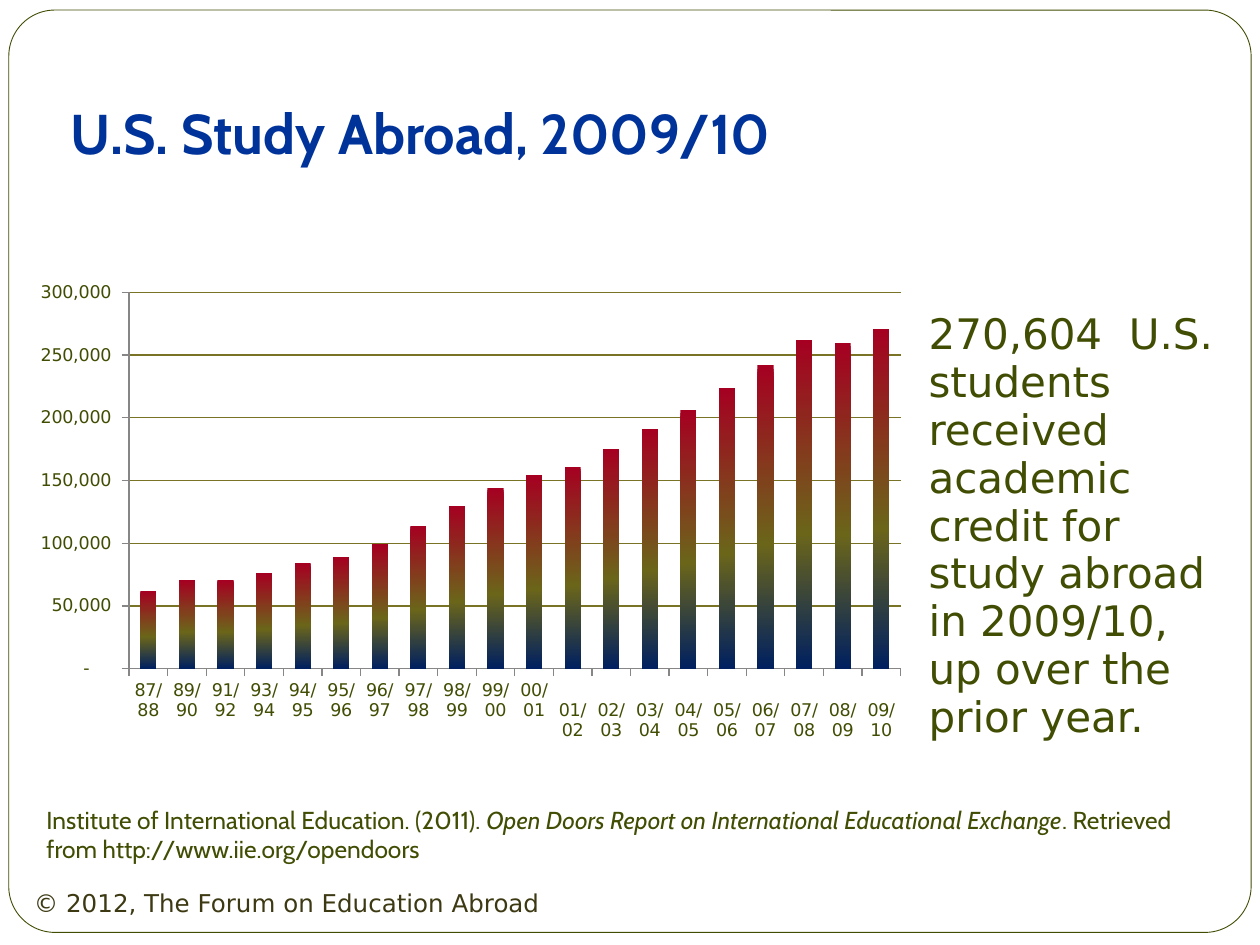
from pptx import Presentation
from pptx.chart.data import CategoryChartData
from pptx.dml.color import RGBColor
from pptx.enum.chart import XL_CHART_TYPE, XL_TICK_MARK
from pptx.enum.shapes import MSO_SHAPE
from pptx.enum.text import MSO_ANCHOR, MSO_AUTO_SIZE, PP_ALIGN
from pptx.oxml import parse_xml
from pptx.oxml.ns import nsdecls
from pptx.util import Inches, Pt

COLUMN_CHART = XL_CHART_TYPE.COLUMN_CLUSTERED
TICK_OUTSIDE = XL_TICK_MARK.OUTSIDE
ROUNDED = MSO_SHAPE.ROUNDED_RECTANGLE
TOP, MIDDLE = MSO_ANCHOR.TOP, MSO_ANCHOR.MIDDLE
NO_AUTOFIT = MSO_AUTO_SIZE.NONE
LEFT = PP_ALIGN.LEFT

WHITE = RGBColor(0xFF, 0xFF, 0xFF)
BLUE = RGBColor(0x00, 0x33, 0x99)
GREEN = RGBColor(0x42, 0x4D, 0x04)
BROWN = RGBColor(0x3C, 0x39, 0x13)
OLIVE = RGBColor(0x79, 0x73, 0x25)
GREY = RGBColor(0x86, 0x86, 0x86)
BAR_STOPS = [
    (0, RGBColor(0xA5, 0x00, 0x21)),
    (59, RGBColor(0x6B, 0x65, 0x1A)),
    (100, RGBColor(0x00, 0x20, 0x60)),
]

COLUMNS, ROWS = 100, 75
HEADING_FONT, TEXT_FONT = "Cabin", "DejaVu Sans"
NUMBER_FORMAT = r'_(* #,##0_);_(* \(#,##0\);_(* "-"??_);_(@_)'
PLOT_AREA = {"x": 0.12, "y": 0.04, "w": 0.86, "h": 0.79}

STUDENTS = {
    "87/88": 62000, "89/90": 71000, "91/92": 71000, "93/94": 76000,
    "94/95": 84000, "95/96": 89000, "96/97": 99000, "97/98": 114000,
    "98/99": 130000, "99/00": 144000, "00/01": 154000, " 01/02": 161000,
    " 02/03": 175000, " 03/04": 191000, " 04/05": 206000, " 05/06": 224000,
    " 06/07": 242000, " 07/08": 262000, " 08/09": 260000, " 09/10": 271000,
}


def apply(target, values):
    for name, value in values.items():
        setattr(target, name, value)


def style_font(font, color, **values):
    apply(font, values)
    font.color.rgb = color


class SlideBuilder:
    def __init__(self, presentation):
        self.slide = presentation.slides.add_slide(presentation.slide_layouts[1])
        self.column = presentation.slide_width / COLUMNS
        self.row = presentation.slide_height / ROWS

    def box(self, left, top, width, height):
        return (round(left * self.column), round(top * self.row),
                round(width * self.column), round(height * self.row))

    def frame(self, area, radius):
        shape = self.slide.shapes.add_shape(ROUNDED, *self.box(*area))
        shape.shadow.inherit = False
        shape.adjustments[0] = radius
        shape.fill.solid()
        shape.fill.fore_color.rgb = WHITE
        shape.line.color.rgb = GREEN
        shape.line.width = Pt(0.5)
        self.slide.shapes._spTree.insert(2, shape._element)

    def fill_text(self, shape, runs, color, anchor=TOP, **font):
        text_frame = shape.text_frame
        apply(text_frame, {"word_wrap": True, "auto_size": NO_AUTOFIT,
                           "vertical_anchor": anchor})
        paragraph = text_frame.paragraphs[0]
        paragraph.alignment = LEFT
        for text, extra in runs:
            run = paragraph.add_run()
            run.text = text
            style_font(run.font, color, **font, **extra)
        return paragraph

    def placeholder(self, index, area):
        shape = self.slide.placeholders[index]
        apply(shape, dict(zip(("left", "top", "width", "height"), self.box(*area))))
        return shape

    def title(self, area, text):
        self.fill_text(self.placeholder(0, area), [(text, {})], BLUE, MIDDLE,
                       name=HEADING_FONT, size=Pt(32), bold=True)

    def body(self, area, text):
        paragraph = self.fill_text(self.placeholder(1, area), [("\t" + text, {})],
                                   GREEN, name=TEXT_FONT, size=Pt(24))
        apply(paragraph, {"line_spacing": 0.95, "space_before": Pt(0)})
        properties = paragraph._p.get_or_add_pPr()
        properties.set("marL", str(Inches(0.38)))
        properties.set("indent", str(-Inches(0.38)))
        properties.append(parse_xml(f"<a:buNone {nsdecls('a')}/>"))

    def text(self, area, runs, color, font_name):
        shape = self.slide.shapes.add_textbox(*self.box(*area))
        self.fill_text(shape, runs, color, name=font_name, size=Pt(14))

    def column_chart(self, area, values):
        data = CategoryChartData()
        data.categories = list(values)
        data.add_series("Series 1", list(values.values()))
        chart = self.slide.shapes.add_chart(COLUMN_CHART, *self.box(*area), data).chart
        apply(chart, {"has_legend": False, "has_title": False})
        style_font(chart.font, GREEN, name=TEXT_FONT, size=Pt(10))
        for axis in (chart.category_axis, chart.value_axis):
            axis.major_tick_mark = TICK_OUTSIDE
            axis.format.line.color.rgb = GREY
        apply(chart.value_axis, {"minimum_scale": 0, "maximum_scale": 300000,
                                 "major_unit": 50000})
        apply(chart.value_axis.tick_labels, {"number_format": NUMBER_FORMAT,
                                             "number_format_is_linked": False})
        gridline = chart.value_axis.major_gridlines.format.line
        gridline.color.rgb = OLIVE
        gridline.width = Pt(0.75)
        apply(chart.plots[0], {"gap_width": 140, "vary_by_categories": False})
        self.gradient(chart.plots[0].series[0])
        self.plot_layout(chart)

    def gradient(self, series):
        stops = "".join(
            f'<a:gs pos="{position * 1000}"><a:srgbClr val="{color}"/></a:gs>'
            for position, color in BAR_STOPS)
        series._element.get_or_add_spPr().append(parse_xml(
            f"<a:gradFill {nsdecls('a')}><a:gsLst>{stops}</a:gsLst>"
            '<a:lin ang="5400000" scaled="0"/></a:gradFill>'))

    def plot_layout(self, chart):
        sizes = "".join(f'<c:{name} val="{share}"/>' for name, share in PLOT_AREA.items())
        plot_area = chart._chartSpace.chart.plotArea
        for layout in plot_area.xpath("c:layout"):
            plot_area.remove(layout)
        plot_area.insert(0, parse_xml(
            f"<c:layout {nsdecls('c')}><c:manualLayout>"
            '<c:layoutTarget val="inner"/><c:xMode val="edge"/><c:yMode val="edge"/>'
            f"{sizes}</c:manualLayout></c:layout>"))


def main():
    presentation = Presentation()
    presentation.slide_width = Inches(10)
    presentation.slide_height = Inches(7.5)
    builder = SlideBuilder(presentation)
    builder.frame((0.7, 0.8, 98.6, 73.2), 0.05)
    builder.title((4.6, 7.3, 91.1, 6.3), "U.S. Study Abroad, 2009/10")
    builder.body((68.9, 24.2, 29, 37.8),
                 "270,604  U.S. students received academic credit for study abroad "
                 "in 2009/10, up over the prior year.")
    builder.column_chart((1.7, 21.7, 71.2, 37.8), STUDENTS)
    builder.text((2.7, 63.4, 94.5, 5.7), [
        ("Institute of International Education. (2011). ", {}),
        ("Open Doors Report on International Educational Exchange", {"italic": True}),
        (". Retrieved from http://www.iie.org/opendoors", {}),
    ], GREEN, HEADING_FONT)
    builder.text((1.7, 70, 65.8, 5),
                 [("© 2012, The Forum on Education Abroad", {})], BROWN, TEXT_FONT)
    presentation.save("out.pptx")


if __name__ == "__main__":
    main()
